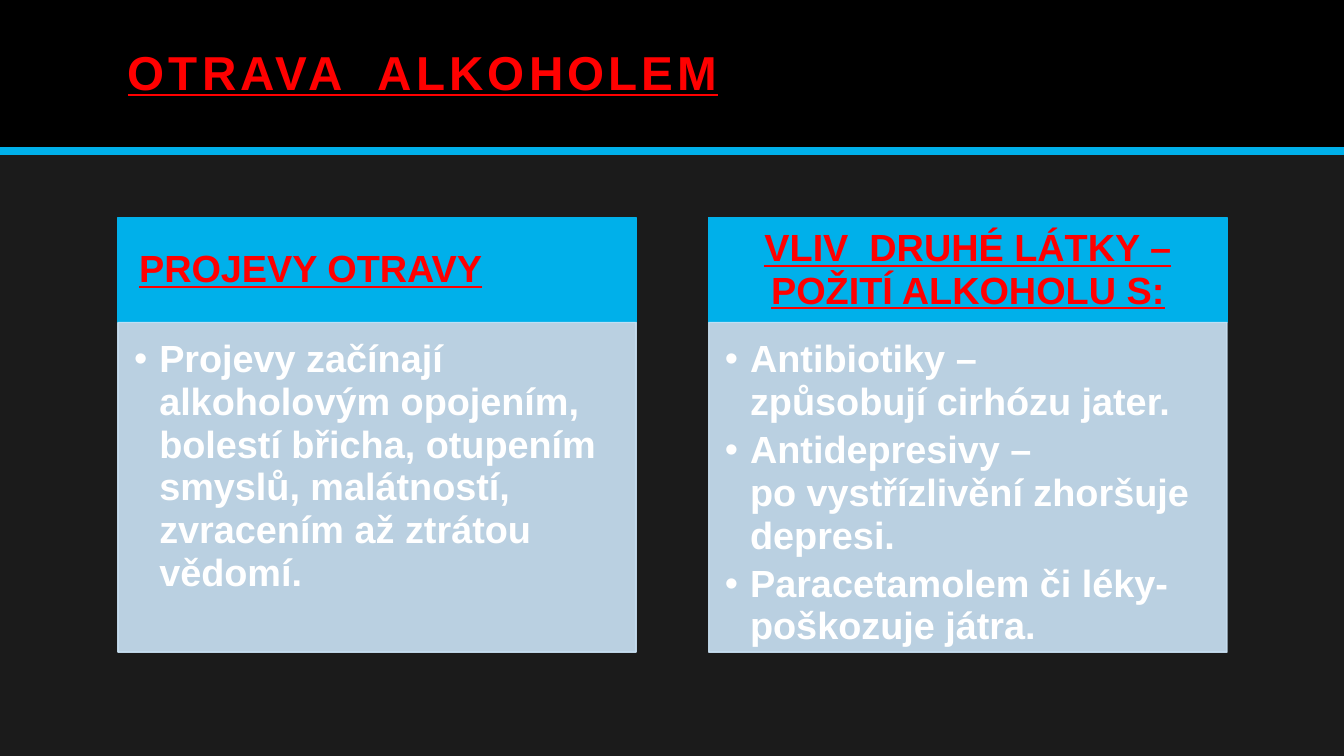
from pptx import Presentation
from pptx.util import Inches, Pt
from pptx.dml.color import RGBColor
from pptx.enum.shapes import MSO_SHAPE, MSO_CONNECTOR
from pptx.enum.text import PP_ALIGN, MSO_ANCHOR
from pptx.oxml.ns import qn
from lxml.etree import SubElement

BLUE, RED, WHITE, PALE = "00B0EA", "FF0000", "FFFFFF", "CCE4F7"


def paint(color, hue):
    color.rgb = RGBColor.from_string(hue)


def write(par, text, size, hue, line):
    """Add bold text to a paragraph; a newline becomes a line break."""
    par.line_spacing = line
    for i, part in enumerate(text.split("\n")):
        if i:
            par.add_line_break()
        run = par.add_run()
        run.text = part
        run.font.name = "Arial"
        run.font.size = Pt(size)
        run.font.bold = True
        run.font.underline = hue == RED
        paint(run.font.color, hue)
    return run


deck = Presentation()
deck.slide_width, deck.slide_height = Inches(13.33), Inches(7.5)
slide = deck.slides.add_slide(deck.slide_layouts[6])
fill = slide.background.fill
fill.solid()
paint(fill.fore_color, "1B1B1B")

# Black header band with blue rule
band = slide.shapes.add_shape(MSO_SHAPE.RECTANGLE, 0, 0, Inches(13.33), Inches(1.5))
band.shadow.inherit = False
band.fill.solid()
paint(band.fill.fore_color, "000000")
band.line.fill.background()
rule = slide.shapes.add_connector(
    MSO_CONNECTOR.STRAIGHT, 0, Inches(1.5), Inches(13.33), Inches(1.5))
rule.line.width = Pt(6)
paint(rule.line.color, BLUE)
SubElement(rule._element.spPr, qn("a:effectLst"))

# Title
title = slide.shapes.add_textbox(Inches(1.17), Inches(0.14), Inches(11), Inches(1.2))
frame = title.text_frame
frame.word_wrap = True
frame.vertical_anchor = MSO_ANCHOR.MIDDLE
run = write(frame.paragraphs[0], "OTRAVA  ALKOHOLEM", 34, RED, 0.9)
run.font._element.set("spc", "300")

# Two columns: heading box above a bulleted box
columns = [
    (1.17, PP_ALIGN.LEFT, "PROJEVY OTRAVY",
     ["Projevy začínají alkoholovým opojením, bolestí břicha, otupením "
      "smyslů, malátností, zvracením až ztrátou vědomí."]),
    (7.03, PP_ALIGN.CENTER, "VLIV  DRUHÉ LÁTKY – POŽITÍ ALKOHOLU S:",
     ["Antibiotiky –\nzpůsobují cirhózu jater.",
      "Antidepresivy –\npo vystřízlivění zhoršuje depresi.",
      "Paracetamolem či léky- poškozuje játra."]),
]
for left, align, head, items in columns:
    rows = [
        (2.16, 1.04, BLUE, RED, [head], (0.21, 0.12, 0.21, 0.12)),
        (3.2, 3.27, PALE, WHITE, items, (0.16, 0.16, 0.21, 0.24)),
    ]
    for top, high, hue, ink, texts, pads in rows:
        box = slide.shapes.add_shape(
            MSO_SHAPE.RECTANGLE, Inches(left), Inches(top), Inches(5.14), Inches(high))
        box.shadow.inherit = False
        box.fill.solid()
        paint(box.fill.fore_color, hue)
        box.line.width = Pt(1)
        paint(box.line.color, hue)
        frame = box.text_frame
        frame.word_wrap = True
        (frame.margin_left, frame.margin_top,
         frame.margin_right, frame.margin_bottom) = map(Inches, pads)
        body = hue == PALE
        frame.vertical_anchor = MSO_ANCHOR.TOP if body else MSO_ANCHOR.MIDDLE
        if body:
            for tint in box._element.spPr.iter(qn("a:srgbClr")):
                SubElement(tint, qn("a:alpha"), val="90000")
        for i, text in enumerate(texts):
            par = frame.add_paragraph() if i else frame.paragraphs[0]
            par.alignment = PP_ALIGN.LEFT if body else align
            write(par, text, 27, ink, 0.94)
            if body:
                par.space_after = Pt(4)
                props = par._p.get_or_add_pPr()
                props.set("marL", str(Inches(0.25)))
                props.set("indent", str(-Inches(0.25)))
                SubElement(props, qn("a:buFont"), typeface="Arial")
                SubElement(props, qn("a:buChar"), char="•")

deck.save("out.pptx")
